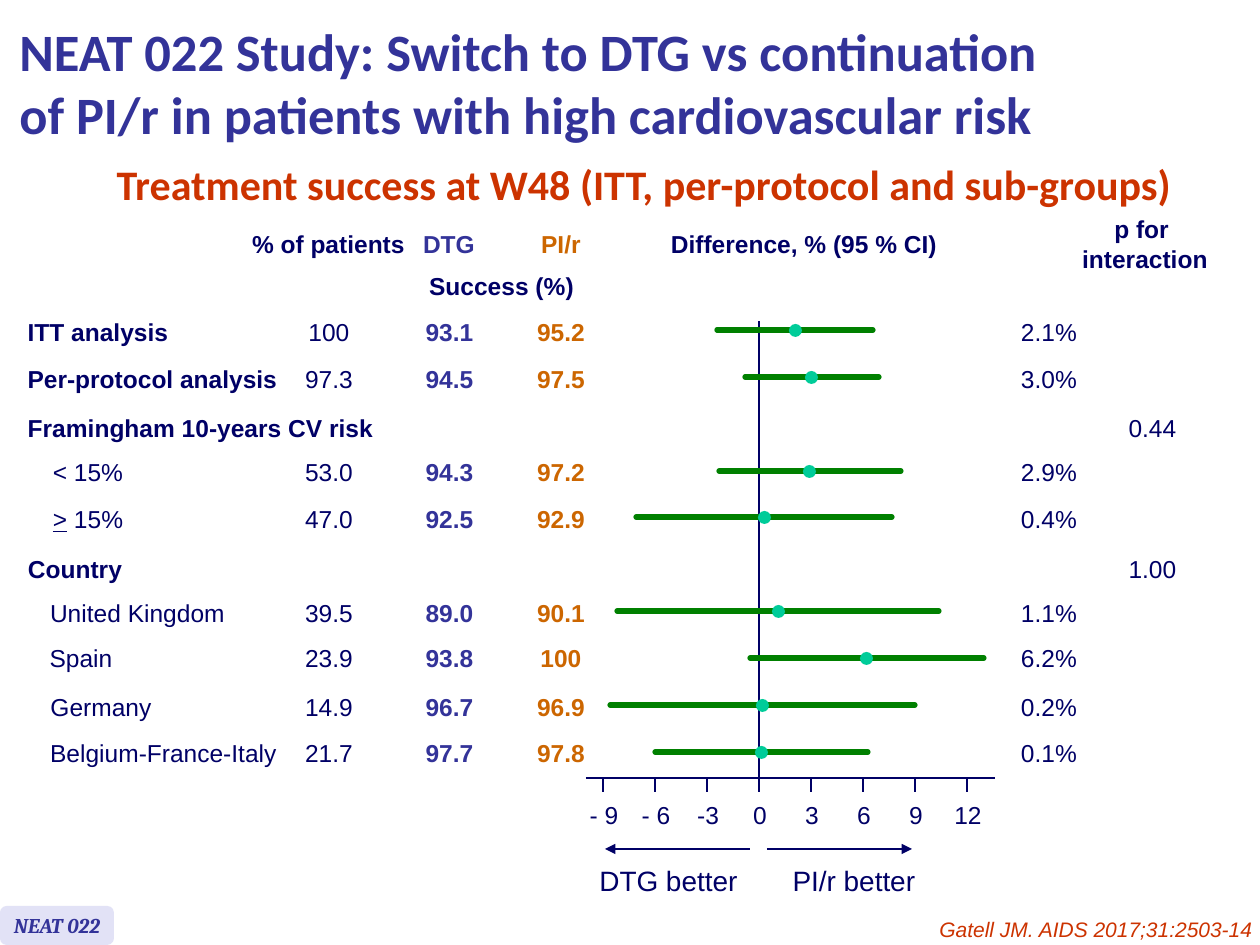
from lxml import etree
from pptx import Presentation
from pptx.dml.color import RGBColor
from pptx.enum.shapes import MSO_CONNECTOR, MSO_SHAPE
from pptx.enum.text import MSO_ANCHOR, MSO_AUTO_SIZE, PP_ALIGN
from pptx.oxml.ns import qn
from pptx.util import Pt

LEFT, MID, RIGHT = PP_ALIGN.LEFT, PP_ALIGN.CENTER, PP_ALIGN.RIGHT
FIT, FIXED = MSO_AUTO_SIZE.SHAPE_TO_FIT_TEXT, MSO_AUTO_SIZE.NONE
CENTER = MSO_ANCHOR.MIDDLE
LINE = MSO_CONNECTOR.STRAIGHT
OVAL, ROUND = MSO_SHAPE.OVAL, MSO_SHAPE.ROUNDED_RECTANGLE

SCALE = 914400 / 126
HIGH = 43
ZERO, UNIT = 759, 17.33
AXIS = 778
COLORS = {"navy": "000066", "blue": "333399", "orange": "CC6600", "red": "CC3300",
          "green": "008000", "teal": "00CC99", "pale": "E2E2F6"}

COLUMNS = [(329, 74, "navy", False), (449, 73, "blue", True),
           (561, 74, "orange", True), (1049, 82, "navy", False)]
ROWS = [
    ("ITT analysis", 14, 168, 311, ("100", "93.1", "95.2", "2.1%"), (-2.4, 2.1, 6.6)),
    ("Per-protocol analysis", 14, 277, 358, ("97.3", "94.5", "97.5", "3.0%"), (-0.8, 3.0, 6.9)),
    ("Framingham 10-years CV risk", 14, 373, 407, "0.44", None),
    ("< 15%", 40, 96, 451, ("53.0", "94.3", "97.2", "2.9%"), (-2.3, 2.9, 8.2)),
    ("> 15%", 40, 96, 498, ("47.0", "92.5", "92.9", "0.4%"), (-7.1, 0.3, 7.7)),
    ("Country", 15, 120, 548, "1.00", None),
    ("United Kingdom", 37, 201, 592, ("39.5", "89.0", "90.1", "1.1%"), (-8.2, 1.1, 10.4)),
    ("Spain", 37, 88, 637, ("23.9", "93.8", "100", "6.2%"), (-0.5, 6.2, 13.0)),
    ("Germany", 36, 130, 686, ("14.9", "96.7", "96.9", "0.2%"), (-8.6, 0.2, 9.0)),
    ("Belgium-France-Italy", 36, 255, 732, ("21.7", "97.7", "97.8", "0.1%"), (-6.0, 0.1, 6.3)),
]
TICKS = ["- 9", "- 6", "-3", "0", "3", "6", "9", "12"]


def px(*sizes):
    return [round(n * SCALE) for n in sizes]


def paint(color):
    return RGBColor.from_string(COLORS[color])


def place(value):
    return round(ZERO + UNIT * value)


def add_run(para, text, size, color, font="Arial", bold=False, slant=False, under=False):
    run = para.add_run()
    run.text = text
    face = run.font
    face.name, face.size, face.bold, face.italic = font, Pt(size), bold, slant
    if under:
        face.underline = True
    face.color.rgb = paint(color)


def add_box(slide, area, align=MID, wrap=False):
    frame = slide.shapes.add_textbox(*px(*area)).text_frame
    frame.word_wrap = wrap
    frame.auto_size = FIT
    frame.paragraphs[0].alignment = align
    return frame


def add_text(slide, text, area, color="navy", bold=False, size=14, align=MID):
    frame = add_box(slide, area, align)
    add_run(frame.paragraphs[0], text, size, color, bold=bold)


def add_cell(slide, text, mid, top, width, color="navy", bold=False):
    add_text(slide, text, (mid - width // 2, top, width, HIGH), color, bold)


def add_arrow(slide, start, end, y):
    line = slide.shapes.add_connector(LINE, *px(start, y, end, y))
    line.line.color.rgb = paint("navy")
    line.line.width = Pt(0.75)
    props = line._element.spPr
    etree.SubElement(props.find(qn("a:ln")), qn("a:tailEnd")).set("type", "triangle")
    etree.SubElement(props, qn("a:effectLst"))


def add_strokes(slide, lines, color, width, cap="flat"):
    pen = slide.shapes.build_freeform(*lines[0][:2], scale=SCALE)
    for step, (left, top, right, base) in enumerate(lines):
        if step:
            pen.move_to(left, top)
        pen.add_line_segments([(right, base)], close=False)
    shape = pen.convert_to_shape()
    shape.shadow.inherit = False
    shape.fill.background()
    shape.line.color.rgb = paint(color)
    shape.line.width = Pt(width)
    shape._element.spPr.find(qn("a:ln")).set("cap", cap)


def add_shape(slide, kind, area, color):
    shape = slide.shapes.add_shape(kind, *px(*area))
    shape.shadow.inherit = False
    shape.fill.solid()
    shape.fill.fore_color.rgb = paint(color)
    shape.line.fill.background()
    return shape


def add_title(slide):
    frame = add_box(slide, (7, 6, 1129, 152), LEFT, True)
    frame.auto_size = FIXED
    frame.vertical_anchor = CENTER
    para = frame.paragraphs[0]
    add_run(para, "NEAT 022 Study: Switch to DTG vs continuation ", 30, "blue", "Calibri", True)
    para.add_line_break()
    add_run(para, "of PI/r in patients with high cardiovascular risk", 30, "blue", "Calibri", True)
    para = add_box(slide, (28, 176, 1232, 44), MID, True).paragraphs[0]
    para.line_spacing = Pt(15.2)
    add_run(para, "Treatment success at W48 (ITT, per-protocol and sub-groups)",
            24, "red", "Calibri", True)


def add_heads(slide):
    for text, mid, top, width, color in [
            ("% of patients", 328, 223, 179, "navy"), ("DTG", 449, 223, 78, "blue"),
            ("PI/r", 561, 223, 66, "orange"), ("Success (%)", 501, 265, 171, "navy"),
            ("Difference, % (95 % CI)", 804, 223, 294, "navy")]:
        add_cell(slide, text, mid, top, width, color, True)
    frame = add_box(slide, (1049, 208, 192, 72), MID, True)
    add_run(frame.paragraphs[0], "p for ", 14, "navy", bold=True)
    para = frame.add_paragraph()
    para.alignment = MID
    add_run(para, "interaction", 14, "navy", bold=True)


def add_label(slide, text, left, width, top):
    area = (left, top, width, HIGH)
    if text.startswith(">"):
        para = add_box(slide, area).paragraphs[0]
        add_run(para, text[0], 14, "navy", under=True)
        add_run(para, text[1:], 14, "navy")
    else:
        add_text(slide, text, area, bold=left < 20)


def add_rows(slide):
    for label, left, width, top, cells, span in ROWS:
        add_label(slide, label, left, width, top)
        if span is None:
            add_cell(slide, cells, 1152, top, 73)
            continue
        for text, (mid, wide, color, bold) in zip(cells, COLUMNS):
            add_cell(slide, text, mid, top, wide, color, bold)


def add_spans(slide):
    spans = [(round(330 + 46.85 * step), *map(place, row[-1]))
             for step, row in enumerate(ROWS) if row[-1]]
    add_strokes(slide, [(low, y, high, y) for y, low, mean, high in spans], "green", 3, "rnd")
    for y, low, mean, high in spans:
        add_shape(slide, OVAL, (mean - 6, y - 6, 13, 13), "teal")


def add_axis(slide):
    marks = [place(3 * step - 9) for step in range(len(TICKS))]
    lines = [(586, AXIS, 995, AXIS), (ZERO, 321, ZERO, AXIS)]
    add_strokes(slide, lines + [(x, AXIS, x, AXIS + 14) for x in marks], "navy", 1)
    for x, text in zip(marks, TICKS):
        add_cell(slide, text, x + 1, 794, 54)
    for start, end in [(767, 912), (750, 605)]:
        add_arrow(slide, start, end, 849)
    add_text(slide, "DTG better", (585, 857, 165, 47), size=16, align=RIGHT)
    add_text(slide, "PI/r better", (779, 857, 150, 47), size=16)


def add_foot(slide):
    badge = add_shape(slide, ROUND, (0, 906, 114, 39), "pale")
    frame = badge.text_frame
    frame.word_wrap = False
    frame.vertical_anchor = CENTER
    frame.paragraphs[0].alignment = MID
    add_run(frame.paragraphs[0], "NEAT 022", 12, "blue", "Cambria", True, True)
    frame = add_box(slide, (824, 910, 441, 38), RIGHT, True)
    add_run(frame.paragraphs[0], "Gatell JM. AIDS 2017;31:2503-14", 12, "red", slant=True)


def main():
    deck = Presentation()
    deck.slide_width, deck.slide_height = px(1260, 945)
    slide = deck.slides.add_slide(deck.slide_layouts[6])
    add_axis(slide)
    add_spans(slide)
    add_rows(slide)
    add_heads(slide)
    add_foot(slide)
    add_title(slide)
    deck.save("out.pptx")


if __name__ == "__main__":
    main()
